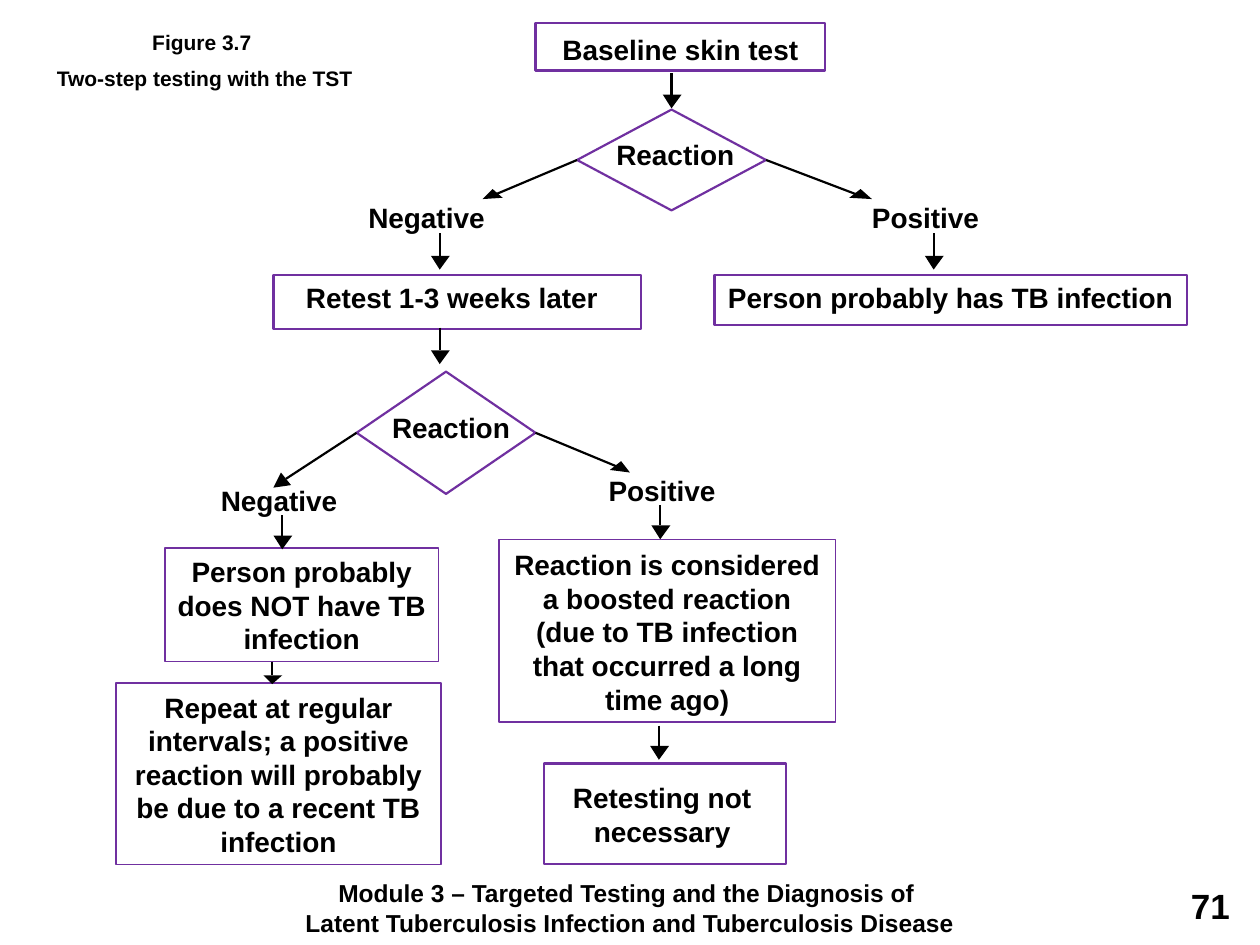
from lxml import etree
from pptx import Presentation
from pptx import util as u
from pptx.dml.color import RGBColor
from pptx.enum import shapes, text
from pptx.oxml.ns import qn

PX = 9144  # 100 px to the inch
COL = {"ink": "000000", "edge": "7030A0", "paper": "FFFFFF"}
FONT = "Arial"
LEFT, MID, RIGHT = text.PP_ALIGN.LEFT, text.PP_ALIGN.CENTER, text.PP_ALIGN.RIGHT
TOP, LOW = text.MSO_ANCHOR.TOP, text.MSO_ANCHOR.BOTTOM


def rgb(name):
    return RGBColor.from_string(COL[name])


def emu(*nums):
    return [u.Emu(n * PX) for n in nums]


def write(shape, *lines, size=16, align=MID, anchor=LOW, pad=(10, 5), wrap=True, gap=0):
    """Fill a shape with one paragraph per line; gap is the points between them."""
    frame = shape.text_frame
    frame.word_wrap = wrap
    frame.vertical_anchor = anchor
    frame.margin_left = frame.margin_right = pad[0] * PX
    frame.margin_top = frame.margin_bottom = pad[1] * PX
    for i, line in enumerate(lines):
        para = frame.add_paragraph() if i else frame.paragraphs[0]
        para.alignment = align
        if i and gap:
            para.space_before = u.Pt(gap)
        run = para.add_run()
        run.text = line
        font = run.font
        font.name, font.size, font.bold = FONT, u.Pt(size), True
        font.color.rgb = rgb("ink")


class Chart:
    """Flow chart style and the slide it is drawn on."""

    def __init__(self, slide):
        self.shapes = slide.shapes

    def node(self, kind, box, width=1.25, fill=True):
        shape = self.shapes.add_shape(kind, *emu(*box))
        shape.shadow.inherit = False
        if fill:
            shape.fill.solid()
            shape.fill.fore_color.rgb = rgb("paper")
        else:
            shape.fill.background()
        shape.line.color.rgb = rgb("edge")
        shape.line.width = u.Pt(width)
        return shape

    def rect(self, *box, **style):
        return self.node(shapes.MSO_SHAPE.RECTANGLE, box, **style)

    def diamond(self, *box):
        return self.node(shapes.MSO_SHAPE.DIAMOND, box)

    def label(self, box, *lines, **style):
        write(self.shapes.add_textbox(*emu(*box)), *lines, **style)

    def tag(self, box, line, wrap=False):
        self.label(box, line, pad=(0, 0), anchor=TOP, wrap=wrap)

    def arrow(self, start, end, head, source=None, site=0):
        """Draw a line and its triangular head, joined to source if given."""
        line = self.shapes.add_connector(
            shapes.MSO_CONNECTOR.STRAIGHT, *emu(*start, *end))
        if source is not None:
            line.begin_connect(source, site)
        line.line.color.rgb = rgb("ink")
        line.line.width = u.Pt(1.25)
        etree.SubElement(line._element.spPr, qn("a:effectLst"))
        pen = self.shapes.build_freeform(*head[0], scale=PX)
        pen.add_line_segments(head[1:], close=True)
        tip = pen.convert_to_shape()
        tip.shadow.inherit = False
        tip.fill.solid()
        tip.fill.fore_color.rgb = rgb("ink")
        tip.line.fill.background()

    def down(self, x, top, tip, depth=11):
        base = tip - depth
        self.arrow((x, top), (x, base), [(x - 7, base), (x, tip), (x + 8, base)])


def main():
    deck = Presentation()
    deck.slide_width, deck.slide_height = emu(1000, 750)
    flow = Chart(deck.slides.add_slide(deck.slide_layouts[6]))

    flow.label((25, 692, 950, 52),
               "Module 3 – Targeted Testing and the Diagnosis of ",
               "Latent Tuberculosis Infection and Tuberculosis Disease",
               size=14, anchor=TOP)
    flow.label((753, 697, 233, 52), "71", size=20, align=RIGHT, anchor=TOP)
    flow.label((0, 17, 325, 60), "Figure 3.7 ", "Two-step testing with the TST",
               size=12, gap=6)

    # First test
    first = flow.diamond(458, 87, 150, 80)
    flow.rect(425, 18, 230, 38)
    flow.tag((446, 26, 188, 27), "Baseline skin test")
    flow.tag((483, 109, 106, 27), "Reaction", wrap=True)
    flow.arrow((458, 127), (394, 154), [(391, 150), (383, 158), (399, 157)], first, 1)
    flow.arrow((608, 127), (679, 154), [(674, 157), (692, 158), (683, 150)], first, 3)
    flow.rect(217, 218, 292, 43)
    flow.rect(567, 218, 375, 40)
    flow.label((233, 217, 275, 37), "Retest 1-3 weeks later", align=LEFT)
    flow.label((567, 217, 375, 37), "Person probably has TB infection")

    # Second test
    second = flow.diamond(283, 295, 142, 97)
    flow.tag((308, 326, 100, 27), "Reaction", wrap=True)
    flow.arrow((283, 343), (227, 380), [(223, 375), (217, 387), (231, 385)], second, 1)
    flow.arrow((425, 343), (489, 370), [(484, 373), (500, 375), (493, 366)], second, 3)

    for x, y in ((292, 159), (175, 384)):
        flow.tag((x, y, 93, 27), "Negative")
    for x, y in ((692, 159), (483, 376)):
        flow.tag((x, y, 85, 27), "Positive")

    # Outcomes
    flow.rect(432, 606, 192, 80)
    flow.label((438, 614, 175, 64), "Retesting not necessary")
    for box, line in (
        ((131, 435, 217, 90), "Person probably does NOT have TB infection"),
        ((396, 428, 267, 145), "Reaction is considered a boosted reaction "
                               "(due to TB infection that occurred a long time ago)"),
        ((92, 542, 258, 144), "Repeat at regular intervals; a positive reaction "
                              "will probably be due to a recent TB infection"),
    ):
        write(flow.rect(*box, width=0.75, fill=False), line)

    for x, top, tip in ((533, 58, 86), (349, 185, 214), (741, 185, 214),
                        (349, 260, 289), (224, 409, 436), (524, 401, 428),
                        (523, 576, 603)):
        flow.down(x, top, tip)
    flow.down(216, 525, 543, depth=7)

    deck.save("out.pptx")


if __name__ == "__main__":
    main()
